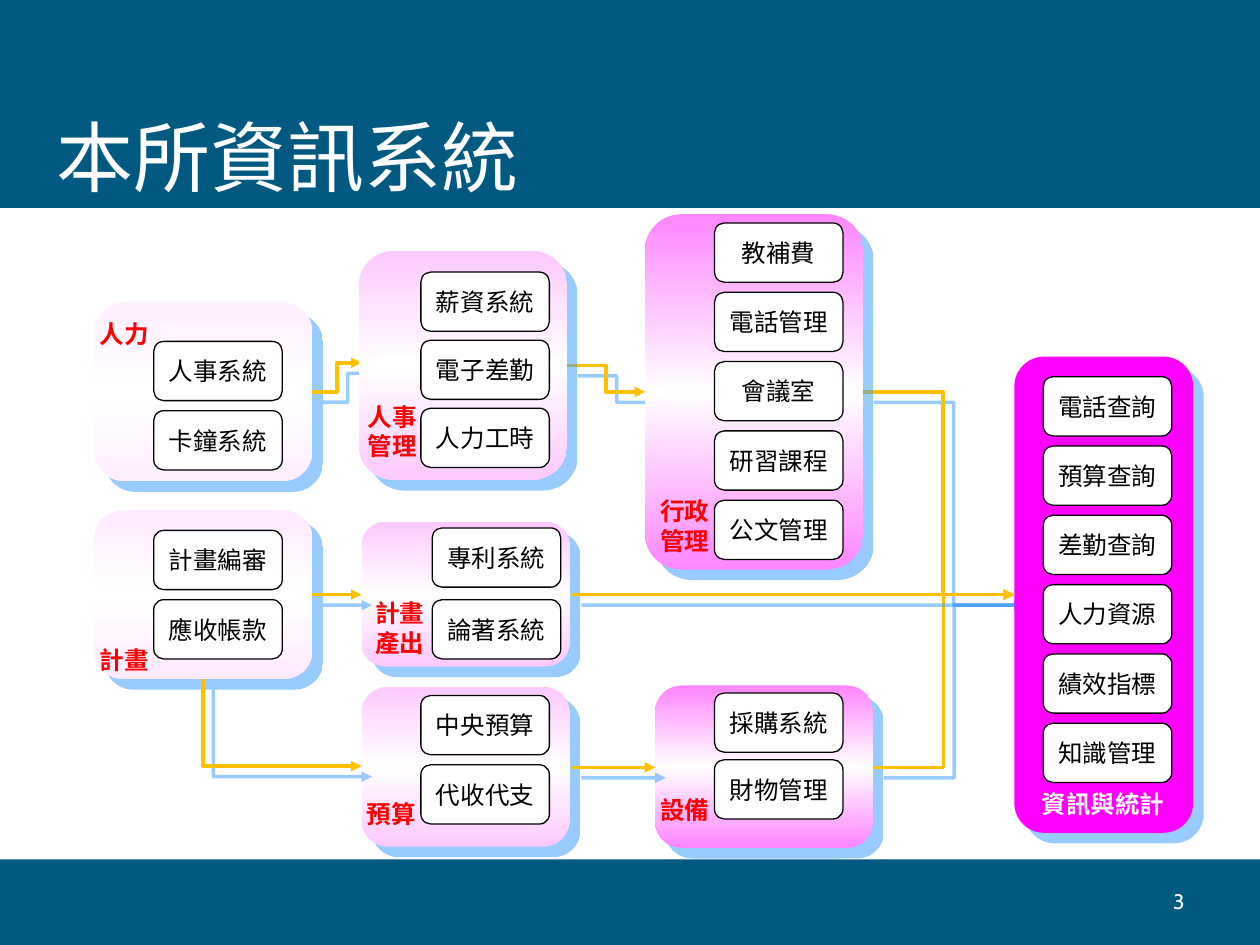
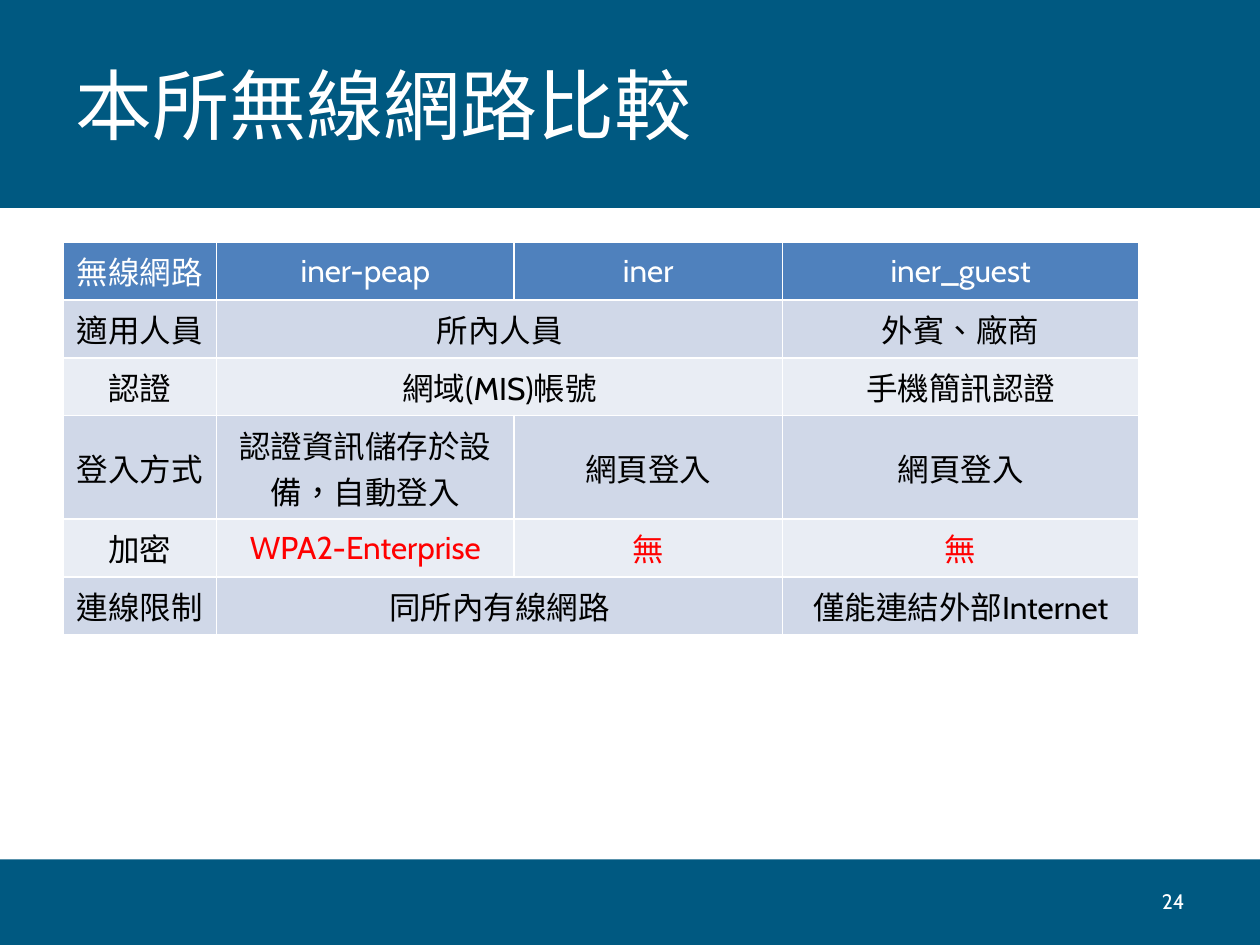
"""Build two slides on the institute's information systems and wireless networks."""
from copy import deepcopy

from lxml.etree import SubElement
from pptx import Presentation
from pptx.dml.color import RGBColor
from pptx.enum.lang import MSO_LANGUAGE_ID as Language
from pptx.enum.shapes import MSO_CONNECTOR as Link, MSO_SHAPE as Preset
from pptx.enum.text import MSO_ANCHOR as Anchor, PP_ALIGN as Align
from pptx.oxml.ns import qn
from pptx.util import Inches, Pt

COLORS = {
    "band": "005981", "white": "FFFFFF", "black": "000000", "red": "FF0000",
    "flow": "FFC000", "shadow": "3399FF", "header": "4F81BD",
    "odd_row": "D0D8E8", "even_row": "E9EDF4", "magenta": "FF00FF",
    "pale": "FFEFFF", "blush": "FFEBFF", "pink": "FFC9FF", "orchid": "FF85FF",
}
TITLE = {"name": "Cabin", "size": Pt(44), "color": "white"}
FOOTER = {"name": "Cabin", "size": Pt(12), "color": "white"}
CELL = {"name": "Cabin", "size": Pt(18), "color": "black", "bold": False,
        "language_id": Language.TRADITIONAL_CHINESE}
NODE = {"name": "Times New Roman", "size": Pt(14), "color": "black"}
LABEL = {**NODE, "color": "red", "bold": True}

NODE_WIDTH, NODE_HEIGHT = 1.02, 0.47

# Each panel: area, tint, label, label area, first node corner, node step, nodes
BACK_PANELS = [
    ((0.75, 2.4, 1.73, 1.42), "pale", "人力", (0.67, 2.48, 0.63, 0.33),
     (1.22, 2.71), 0.55, ["人事系統", "卡鐘系統"]),
    ((0.75, 4.05, 1.73, 1.34), "blush", "計畫", (0.67, 5.07, 0.63, 0.33),
     (1.22, 4.21), 0.55, ["計畫編審", "應收帳款"]),
    ((2.87, 5.45, 1.65, 1.27), "pink", "預算", (2.79, 6.29, 0.63, 0.33),
     (3.34, 5.52), 0.55, ["中央預算", "代收代支"]),
    ((5.2, 5.44, 1.73, 1.29), "orchid", "設備", (5.12, 6.26, 0.63, 0.32),
     (5.67, 5.5), 0.53, ["採購系統", "財物管理"]),
    ((2.87, 4.14, 1.65, 1.15), "pink", "計畫產出", (2.86, 4.7, 0.63, 0.57),
     (3.43, 4.19), 0.57, ["專利系統", "論著系統"]),
]
FRONT_PANELS = [
    ((5.12, 1.7, 1.73, 2.82), "orchid", "行政管理", (5.12, 3.89, 0.63, 0.57),
     (5.67, 1.77), 0.55, ["教補費", "電話管理", "會議室", "研習課程", "公文管理"]),
    ((8.05, 2.83, 1.42, 3.78), "magenta", "資訊與統計", (7.97, 6.21, 1.57, 0.33),
     (8.28, 2.99), 0.55,
     ["電話查詢", "預算查詢", "差勤查詢", "人力資源", "績效指標", "知識管理"]),
    ((2.85, 1.99, 1.65, 1.82), "pink", "人事管理", (2.8, 3.14, 0.63, 0.57),
     (3.34, 2.16), 0.54, ["薪資系統", "電子差勤", "人力工時"]),
]

# Each flow: start, end, and where it bends (share of its width, None if straight)
FLOWS = [
    ((1.61, 5.39), (2.87, 6.08), 0),
    ((2.48, 3.11), (2.87, 2.88), 0.5),
    ((2.48, 4.72), (2.87, 4.72), None),
    ((4.53, 6.09), (5.2, 6.09), None),
    ((6.85, 3.11), (8.05, 4.72), 0.53),
    ((6.93, 6.09), (8.05, 4.72), 0.5),
    ((4.53, 4.72), (8.05, 4.72), None),
    ((4.5, 2.9), (5.12, 3.11), 0.5),
]

NETWORKS = [
    ["無線網路", "iner-peap", "iner", "iner_guest"],
    ["適用人員", "所內人員", None, "外賓、廠商"],
    ["認證", "網域(MIS)帳號", None, "手機簡訊認證"],
    ["登入方式", "認證資訊儲存於設備，自動登入", "網頁登入", "網頁登入"],
    ["加密", "WPA2-Enterprise", "無", "無"],
    ["連線限制", "同所內有線網路", None, "僅能連結外部Internet"],
]
COLUMN_WIDTHS = [1.22, 2.36, 2.13, 2.83]
ROW_HEIGHTS = [0.46, 0.46, 0.46, 0.82, 0.46, 0.46]
ENCRYPTION_ROW = 4


def color(name):
    """Return the named colour."""
    return RGBColor.from_string(COLORS[name])


def inches(area):
    """Convert a tuple of numbers to lengths."""
    return [Inches(value) for value in area]


def write(frame, text, style, align=Align.LEFT):
    """Put one styled paragraph into a text frame."""
    para = frame.paragraphs[0]
    para.alignment = align
    span = para.add_run()
    span.text = text
    for key, value in style.items():
        if key == "color":
            span.font.color.rgb = color(value)
        else:
            setattr(span.font, key, value)


def add_text(shapes, area, text, style, align=Align.LEFT, anchor=Anchor.TOP):
    """Add a wrapping text box."""
    frame = shapes.add_textbox(*inches(area)).text_frame
    frame.word_wrap = True
    frame.vertical_anchor = anchor
    write(frame, text, style, align)


def add_filled(shapes, preset, area, fill):
    """Add a plain filled shape with no outline or shadow."""
    shape = shapes.add_shape(preset, *inches(area))
    shape.shadow.inherit = False
    shape.fill.solid()
    shape.fill.fore_color.rgb = color(fill)
    shape.line.fill.background()
    return shape


def add_shadow(shape):
    """Cast the blue shadow to the lower right."""
    properties = shape._element.spPr
    effects = properties.find(qn("a:effectLst"))
    if effects is None:
        effects = SubElement(properties, qn("a:effectLst"))
    shadow = SubElement(effects, qn("a:outerShdw"), blurRad="0", algn="ctr",
                        dist=str(Pt(8.5)), dir=str(45 * 60000), rotWithShape="0")
    tone = SubElement(shadow, qn("a:srgbClr"), val=COLORS["shadow"])
    SubElement(tone, qn("a:alpha"), val="50000")


def add_glow(shape, tint):
    """Fill a shape from tint through white and back to tint, downwards."""
    shape.fill.gradient()
    shape.fill.gradient_angle = 90
    edge, middle = shape.fill.gradient_stops
    edge.color.rgb = color(tint)
    middle.color.rgb = color("white")
    middle.position = 0.5
    stops = shape._element.spPr.find(qn("a:gradFill")).find(qn("a:gsLst"))
    last = deepcopy(stops[0])
    last.set("pos", "100000")
    stops.append(last)


def add_node(shapes, left, top, text):
    """Add one white system box."""
    box = add_filled(shapes, Preset.FLOWCHART_ALTERNATE_PROCESS,
                     (left, top, NODE_WIDTH, NODE_HEIGHT), "white")
    box.line.color.rgb = color("black")
    box.line.width = Pt(0.75)
    box.text_frame.word_wrap = False
    box.text_frame.vertical_anchor = Anchor.MIDDLE
    write(box.text_frame, text, NODE, Align.CENTER)


def add_panel(page, area, tint, label, label_area, corner, step, nodes):
    """Add a group holding a panel, its system boxes and its label."""
    shapes = page.shapes.add_group_shape().shapes
    panel = add_filled(shapes, Preset.ROUNDED_RECTANGLE, area, tint)
    solid = tint == "magenta"
    if not solid:
        add_glow(panel, tint)
    add_shadow(panel)
    left, top = corner
    for index, text in enumerate(nodes):
        add_node(shapes, left, top + index * step, text)
    style = {**LABEL, "color": "white"} if solid else LABEL
    add_text(shapes, label_area, label, style, Align.CENTER)


def add_flow(page, start, end, bend):
    """Add a shadowed arrow, straight or with two corners."""
    kind = Link.STRAIGHT if bend is None else Link.ELBOW
    arrow = page.shapes.add_connector(kind, *inches(start + end))
    arrow.line.color.rgb = color("flow")
    arrow.line.width = Pt(2)
    SubElement(arrow.line._get_or_add_ln(), qn("a:tailEnd"), type="triangle")
    if bend is not None:
        geometry = arrow._element.spPr.find(qn("a:prstGeom"))
        guides = geometry.find(qn("a:avLst"))
        if guides is None:
            guides = SubElement(geometry, qn("a:avLst"))
        SubElement(guides, qn("a:gd"), name="adj1", fmla=f"val {round(bend * 100000)}")
    add_shadow(arrow)


def cell_look(row, column):
    """Return the fill and text colours of a table cell."""
    if row == 0:
        return "header", "white"
    fill = "odd_row" if row % 2 else "even_row"
    return fill, "red" if row == ENCRYPTION_ROW and column else "black"


def add_network_table(page):
    """Add the wireless network comparison."""
    area = (0.5, 1.92, sum(COLUMN_WIDTHS), sum(ROW_HEIGHTS))
    table = page.shapes.add_table(len(ROW_HEIGHTS), len(COLUMN_WIDTHS), *inches(area)).table
    table.first_row = table.horz_banding = False
    for column, width in zip(table.columns, COLUMN_WIDTHS):
        column.width = Inches(width)
    for row, height in zip(table.rows, ROW_HEIGHTS):
        row.height = Inches(height)
    for row, texts in enumerate(NETWORKS):
        for column, text in enumerate(texts):
            cell = table.cell(row, column)
            fill, ink = cell_look(row, column)
            cell.fill.solid()
            cell.fill.fore_color.rgb = color(fill)
            cell.vertical_anchor = Anchor.MIDDLE
            if text is None:
                table.cell(row, column - 1).merge(cell)
            else:
                write(cell.text_frame, text, {**CELL, "color": ink}, Align.CENTER)


def add_page(deck, title, title_area, number):
    """Add a slide with its bands, title and page number."""
    page = deck.slides.add_slide(deck.slide_layouts[6])
    for area in ((0, 6.82, 10, 0.68), (0, 0, 10, 1.65)):
        add_filled(page.shapes, Preset.RECTANGLE, area, "band")
    add_text(page.shapes, title_area, title, TITLE, anchor=Anchor.MIDDLE)
    add_text(page.shapes, (7.17, 6.95, 2.33, 0.4), number, FOOTER,
             Align.RIGHT, Anchor.MIDDLE)
    return page


def main():
    """Build and save the deck."""
    deck = Presentation()
    deck.slide_width, deck.slide_height = Inches(10), Inches(7.5)

    page = add_page(deck, "本所資訊系統", (0.35, 0.8, 4.89, 0.87), "3")
    for panel in BACK_PANELS:
        add_panel(page, *panel)
    for flow in FLOWS:
        add_flow(page, *flow)
    for panel in FRONT_PANELS:
        add_panel(page, *panel)

    page = add_page(deck, "本所無線網路比較", (0.5, 0.2, 9, 1.25), "24")
    add_network_table(page)

    deck.save("out.pptx")


if __name__ == "__main__":
    main()
